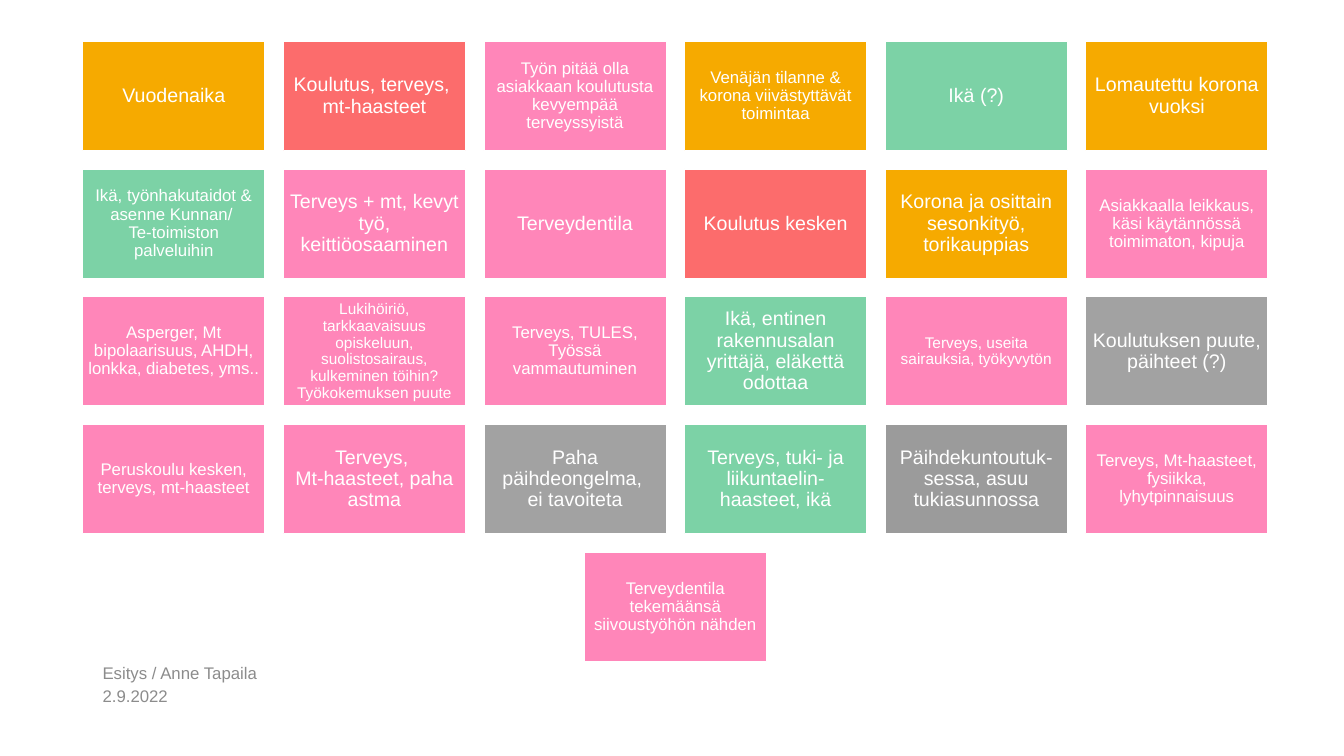
"""Build a slide of coloured tiles listing obstacles to employment."""
from copy import deepcopy
from dataclasses import dataclass

from pptx import Presentation
from pptx.dml.color import RGBColor
from pptx.enum.shapes import MSO_SHAPE as Shape
from pptx.enum.text import MSO_ANCHOR as Anchor, PP_ALIGN as Align
from pptx.util import Pt

ORANGE, RED, PINK, GREEN = "F6AA00", "FC6C6C", "FF86B9", "7CD2A6"
GREY, DARK_GREY, FOOTER_GREY, WHITE = "A2A2A2", "9B9B9B", "8C8C8C", "FFFFFF"

COLUMNS = 6
GRID_LEFT, GRID_TOP = 59, 29.5
TILE_WIDTH, TILE_HEIGHT, GAP = 130.3, 78.2, 13


@dataclass
class Tile:
    text: str
    fill: str
    size: int = 14


@dataclass
class Footer:
    text: str
    top: float
    width: float
    height: float


TILES = [
    Tile("Vuodenaika", ORANGE),
    Tile("Koulutus, terveys, \nmt-haasteet", RED),
    Tile("Työn pitää olla asiakkaan koulutusta kevyempää terveyssyistä", PINK, 12),
    Tile("Venäjän tilanne & korona viivästyttävät toimintaa", ORANGE, 12),
    Tile("Ikä (?)", GREEN),
    Tile("Lomautettu korona vuoksi", ORANGE),
    Tile("Ikä, työnhakutaidot & asenne Kunnan/ \nTe-toimiston palveluihin", GREEN, 12),
    Tile("Terveys + mt, kevyt työ, keittiöosaaminen", PINK),
    Tile("Terveydentila", PINK),
    Tile("Koulutus kesken", RED),
    Tile("Korona ja osittain sesonkityö, torikauppias", ORANGE),
    Tile("Asiakkaalla leikkaus, käsi käytännössä toimimaton, kipuja", PINK, 12),
    Tile("Asperger, Mt bipolaarisuus, AHDH, lonkka, diabetes, yms..", PINK, 12),
    Tile("Lukihöiriö, tarkkaavaisuus opiskeluun, suolistosairaus, "
         "kulkeminen töihin? Työkokemuksen puute", PINK, 11),
    Tile("Terveys, TULES, Työssä vammautuminen", PINK, 12),
    Tile("Ikä, entinen rakennusalan yrittäjä, eläkettä odottaa", GREEN),
    Tile("Terveys, useita sairauksia, työkyvytön", PINK, 11),
    Tile("Koulutuksen puute, päihteet (?)", GREY),
    Tile("Peruskoulu kesken, terveys, mt-haasteet", PINK, 12),
    Tile("Terveys, \nMt-haasteet, paha astma", PINK),
    Tile("Paha päihdeongelma, \nei tavoiteta", GREY),
    Tile("Terveys, tuki- ja liikuntaelin-\nhaasteet, ikä", GREEN),
    Tile("Päihdekuntoutuk-\nsessa, asuu tukiasunnossa", DARK_GREY),
    Tile("Terveys, Mt-haasteet, fysiikka, lyhytpinnaisuus", PINK, 12),
    Tile("Terveydentila tekemäänsä siivoustyöhön nähden", PINK, 12),
]

FOOTERS = [
    Footer("Esitys / Anne Tapaila", 473, 324, 15),
    Footer("2.9.2022", 489.6, 216, 14.4),
]


def colour(value: str) -> RGBColor:
    return RGBColor.from_string(value)


def write(box, text: str, *, size: int, ink: str, align=Align.LEFT,
          spacing: float = 1.0, inset: float | None = None) -> None:
    frame = box.text_frame
    frame.word_wrap = True
    frame.vertical_anchor = Anchor.MIDDLE
    if inset is not None:
        frame.margin_left = frame.margin_right = Pt(inset)
        frame.margin_top = frame.margin_bottom = Pt(inset)
    para = frame.paragraphs[0]
    para.text = text
    para.alignment = align
    para.line_spacing = spacing
    for span in para.runs:
        span.font.name = "Arial"
        span.font.size = Pt(size)
        span.font.color.rgb = colour(ink)
    for line_break in para._p.br_lst if hasattr(para._p, "br_lst") else para._p.xpath("a:br"):
        line_break.insert(0, deepcopy(para.runs[0]._r.rPr))


def draw_tile(page, tile: Tile, column: float, row: int) -> None:
    box = page.shapes.add_shape(
        Shape.RECTANGLE,
        Pt(GRID_LEFT + column * (TILE_WIDTH + GAP)),
        Pt(GRID_TOP + row * (TILE_HEIGHT + GAP)),
        Pt(TILE_WIDTH), Pt(TILE_HEIGHT))
    box.shadow.inherit = False
    box.fill.solid()
    box.fill.fore_color.rgb = colour(tile.fill)
    box.line.color.rgb = colour(WHITE)
    box.line.width = Pt(1)
    write(box, tile.text, size=tile.size, ink=WHITE, align=Align.CENTER,
          spacing=0.9, inset=0.3 * tile.size)


def draw_footer(page, footer: Footer) -> None:
    box = page.shapes.add_textbox(
        Pt(66.2), Pt(footer.top), Pt(footer.width), Pt(footer.height))
    write(box, footer.text, size=12, ink=FOOTER_GREY)


def main() -> None:
    deck = Presentation()
    deck.slide_width, deck.slide_height = Pt(960), Pt(540)
    page = deck.slides.add_slide(deck.slide_layouts[6])
    for footer in FOOTERS:
        draw_footer(page, footer)
    for start in range(0, len(TILES), COLUMNS):
        row_tiles = TILES[start:start + COLUMNS]
        indent = (COLUMNS - len(row_tiles)) / 2
        for position, tile in enumerate(row_tiles):
            draw_tile(page, tile, indent + position, start // COLUMNS)
    deck.save("out.pptx")


if __name__ == "__main__":
    main()
